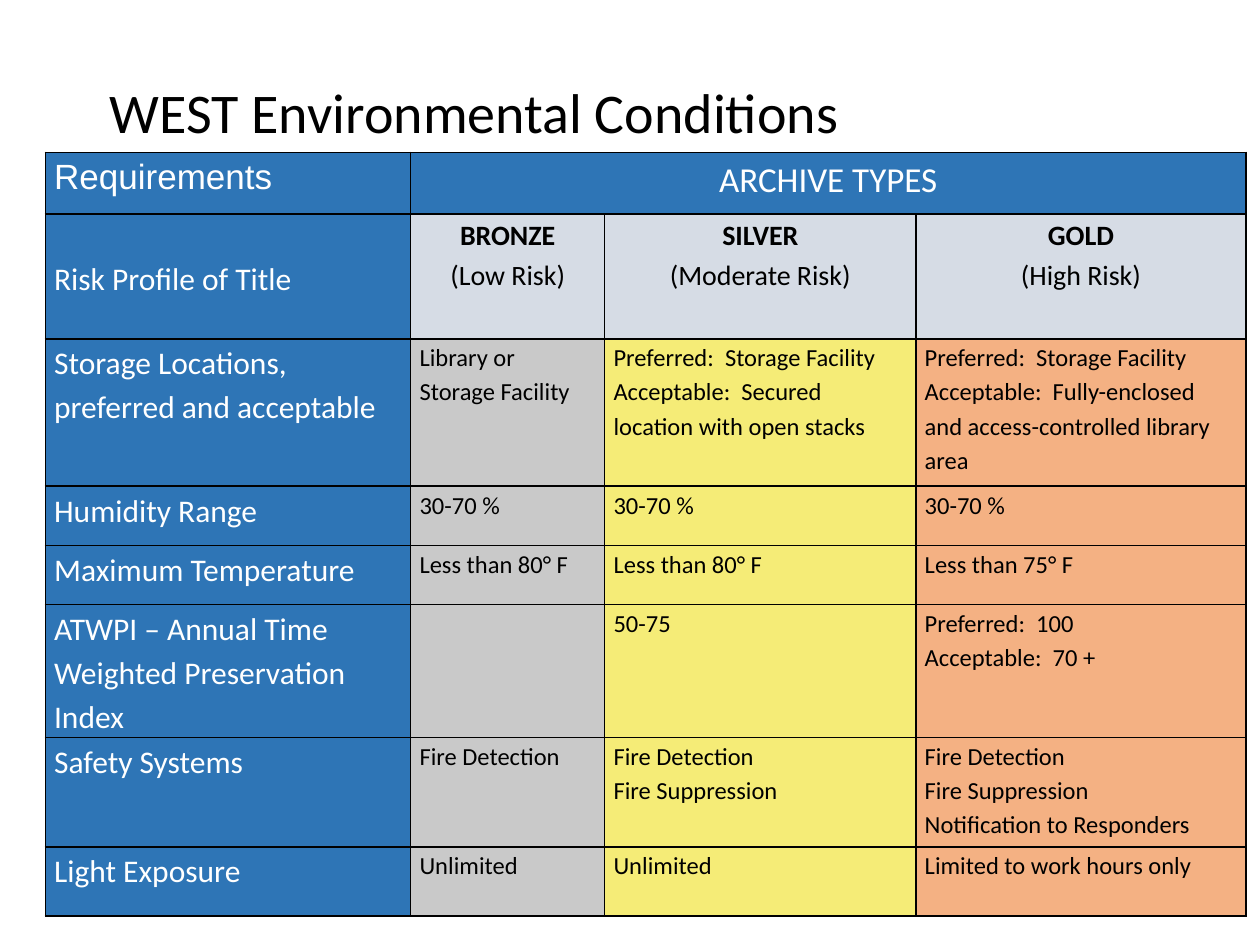
from lxml import etree
from pptx import Presentation
from pptx.dml.color import RGBColor
from pptx.enum import text
from pptx.oxml import ns
from pptx.util import Inches, Pt

BLUE, PALE, GREY, YELLOW, ORANGE = "2E75B6", "D6DCE5", "C9C9C9", "F5EC77", "F4B183"
LEFT, CENTER = text.PP_ALIGN.LEFT, text.PP_ALIGN.CENTER


def write(frame, content, size, color="000000", font="Calibri", align=LEFT,
          spacing=1.15, bold_first=False):
    """Fill a text frame with one paragraph for each line of content."""
    for index, line in enumerate(content.split("\n")):
        para = frame.paragraphs[0] if index == 0 else frame.add_paragraph()
        para.alignment = align
        para.line_spacing = spacing
        span = para.add_run()
        span.text = line
        span.font.size = Pt(size)
        span.font.name = font
        span.font.bold = bold_first and index == 0
        span.font.color.rgb = RGBColor.from_string(color)


def style_cell(cell, color):
    """Give a cell its margins, thin black borders and fill."""
    cell.margin_left = cell.margin_right = Inches(0.07)
    cell.margin_top = cell.margin_bottom = 0
    properties = cell._tc.get_or_add_tcPr()
    for side in ("a:lnL", "a:lnR", "a:lnT", "a:lnB"):
        line = etree.SubElement(properties, ns.qn(side), w=str(Pt(1)))
        fill = etree.SubElement(line, ns.qn("a:solidFill"))
        etree.SubElement(fill, ns.qn("a:srgbClr"), val="000000")
    cell.fill.solid()
    cell.fill.fore_color.rgb = RGBColor.from_string(color)


deck = Presentation()
deck.slide_width, deck.slide_height = Inches(10), Inches(7.5)
page = deck.slides.add_slide(deck.slide_layouts[5])

title = page.shapes.title
title.left, title.top = Inches(0.77), Inches(0.5)
title.width, title.height = Inches(9), Inches(0.83)
title.text_frame.vertical_anchor = text.MSO_ANCHOR.MIDDLE
write(title.text_frame, "WEST Environmental Conditions", 32, spacing=0.9)

rows = [
    ["Requirements", "ARCHIVE TYPES", "", ""],
    ["Risk Profile of Title", "BRONZE\n(Low Risk)", "SILVER\n(Moderate Risk)",
     "GOLD\n(High Risk)"],
    ["Storage Locations, preferred and acceptable",
     "Library or\nStorage Facility",
     "Preferred:  Storage Facility\nAcceptable:  Secured location with open stacks",
     "Preferred:  Storage Facility\n"
     "Acceptable:  Fully-enclosed and access-controlled library area"],
    ["Humidity Range", "30-70 %", "30-70 %", "30-70 %"],
    ["Maximum Temperature", "Less than 80° F", "Less than 80° F", "Less than 75° F"],
    ["ATWPI – Annual Time Weighted Preservation Index", "", "50-75",
     "Preferred:  100\nAcceptable:  70 +"],
    ["Safety Systems", "Fire Detection", "Fire Detection\nFire Suppression",
     "Fire Detection\nFire Suppression\nNotification to Responders"],
    ["Light Exposure", "Unlimited", "Unlimited", "Limited to work hours only"],
]
widths = [2.9, 1.54, 2.47, 2.62]
heights = [0.49, 0.99, 1.17, 0.47, 0.47, 1.04, 0.87, 0.55]

table = page.shapes.add_table(
    len(rows), len(widths), Inches(0.36), Inches(1.21),
    Inches(sum(widths)), Inches(sum(heights))).table
table.first_row = table.horz_banding = False
for column, width in zip(table.columns, widths):
    column.width = Inches(width)
for row, height in zip(table.rows, heights):
    row.height = Inches(height)
table.cell(0, 1).merge(table.cell(0, 3))
table.cell(1, 0).vertical_anchor = text.MSO_ANCHOR.MIDDLE

header_fills = [[BLUE] * 4, [BLUE, PALE, PALE, PALE]]
body_fills = [BLUE, GREY, YELLOW, ORANGE]
for r, entries in enumerate(rows):
    fills = header_fills[r] if r < 2 else body_fills
    for c, entry in enumerate(entries):
        cell = table.cell(r, c)
        style_cell(cell, fills[c])
        if not entry:
            continue
        if r == 0:
            look = dict(size=20, color="FFFFFF", font="Calibri" if c else "Arial",
                        align=CENTER if c else LEFT)
        elif c == 0:
            look = dict(size=18, color="FFFFFF")
        elif r == 1:
            look = dict(size=16, align=CENTER, bold_first=True)
        else:
            look = dict(size=14)
        write(cell.text_frame, entry, **look)

deck.save("out.pptx")
